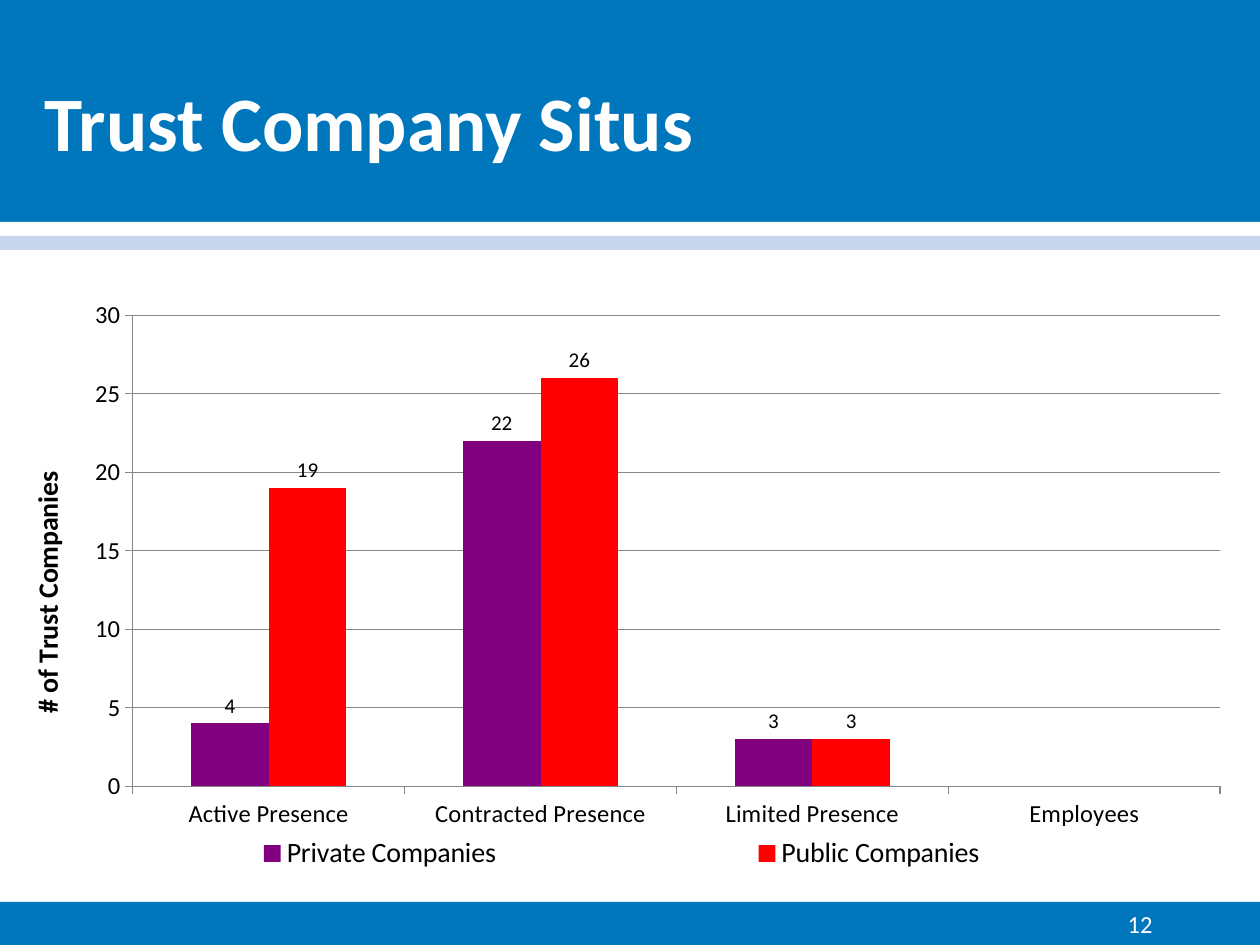
from dataclasses import dataclass

import pptx
import pptx.chart.data
import pptx.dml.color
import pptx.enum.chart
import pptx.enum.shapes
import pptx.enum.text
import pptx.oxml
import pptx.oxml.ns
import pptx.util

EMU_PER_PX = 914400 / 126
ALIGN = pptx.enum.text.PP_ALIGN
ANCHOR = pptx.enum.text.MSO_ANCHOR


@dataclass(frozen=True)
class Theme:
    font: str = "Calibri"
    backdrop: str = "969696"
    blue: str = "0076BC"
    pale_blue: str = "C8D7EE"
    white: str = "FFFFFF"
    black: str = "000000"
    rule: str = "868686"
    title_size: int = 44
    legend_size: int = 16
    axis_size: int = 14
    label_size: int = 12


@dataclass(frozen=True)
class Box:
    left: int
    top: int
    width: int
    height: int

    def emu(self) -> list[pptx.util.Emu]:
        return [px(n) for n in (self.left, self.top, self.width, self.height)]


@dataclass(frozen=True)
class Band:
    top: int
    height: int
    color: str


@dataclass(frozen=True)
class CompanySeries:
    name: str
    counts: tuple[int | None, ...]
    color: str


THEME = Theme()
SLIDE = Box(0, 0, 1260, 945)
BANDS = (
    Band(189, 756, THEME.white),
    Band(902, 43, THEME.blue),
    Band(0, 222, THEME.blue),
    Band(222, 14, THEME.white),
    Band(236, 14, THEME.pale_blue),
)
PRESENCE = ("Active Presence", "Contracted Presence", "Limited Presence", "Employees")
COMPANIES = (
    CompanySeries("Private Companies", (4, 22, 3, None), "800080"),
    CompanySeries("Public Companies", (19, 26, 3, None), "FF0000"),
)


def px(length: int) -> pptx.util.Emu:
    return pptx.util.Emu(round(length * EMU_PER_PX))


def rgb(color: str) -> pptx.dml.color.RGBColor:
    return pptx.dml.color.RGBColor.from_string(color)


def style_font(font, size: int, color: str = THEME.black, bold: bool = False) -> None:
    font.name = THEME.font
    font.size = pptx.util.Pt(size)
    font.bold = bold
    font.color.rgb = rgb(color)


def write_text(frame, text: str, *, size: int, color: str = THEME.black,
               bold: bool = False, align=None, anchor=None) -> None:
    paragraph = frame.paragraphs[0]
    run = paragraph.add_run()
    run.text = text
    style_font(run.font, size, color, bold)
    if align is not None:
        paragraph.alignment = align
    if anchor is not None:
        frame.vertical_anchor = anchor
        frame.word_wrap = True
        frame.auto_size = pptx.enum.text.MSO_AUTO_SIZE.NONE


def draw_band(slide, band: Band) -> None:
    area = Box(0, band.top, SLIDE.width, band.height)
    shape = slide.shapes.add_shape(pptx.enum.shapes.MSO_SHAPE.RECTANGLE, *area.emu())
    shape.shadow.inherit = False
    shape.fill.solid()
    shape.fill.fore_color.rgb = rgb(band.color)
    shape.line.fill.background()


def place_part(part, inner: bool = False, **fractions: float) -> None:
    """Give a chart part a manual layout in fractions of the chart area."""
    target = '<c:layoutTarget val="inner"/>' if inner else ""
    modes = "".join(f'<c:{k}Mode val="edge"/>' for k in "xy")
    sizes = "".join(f'<c:{k} val="{v}"/>' for k, v in fractions.items())
    layout = pptx.oxml.parse_xml(
        f"<c:layout {pptx.oxml.ns.nsdecls('c')}><c:manualLayout>"
        f"{target}{modes}{sizes}</c:manualLayout></c:layout>")
    for old in part.findall(pptx.oxml.ns.qn("c:layout")):
        part.remove(old)
    leading = [n for n in part if n.tag in map(pptx.oxml.ns.qn, ("c:legendPos", "c:tx"))]
    part.insert(len(leading), layout)


def style_axis(axis) -> None:
    style_font(axis.tick_labels.font, THEME.axis_size)
    axis.major_tick_mark = pptx.enum.chart.XL_TICK_MARK.OUTSIDE
    axis.minor_tick_mark = pptx.enum.chart.XL_TICK_MARK.NONE
    axis.format.line.color.rgb = rgb(THEME.rule)
    axis.format.line.width = pptx.util.Pt(0.75)


def style_series(series, color: str) -> None:
    series.invert_if_negative = False
    series.format.fill.solid()
    series.format.fill.fore_color.rgb = rgb(color)
    labels = series.data_labels
    labels.show_value = True
    labels.position = pptx.enum.chart.XL_LABEL_POSITION.OUTSIDE_END
    style_font(labels.font, THEME.label_size)


def draw_presence_chart(slide, area: Box) -> None:
    data = pptx.chart.data.CategoryChartData()
    data.categories = PRESENCE
    for company in COMPANIES:
        data.add_series(company.name, company.counts)
    chart = slide.shapes.add_chart(
        pptx.enum.chart.XL_CHART_TYPE.COLUMN_CLUSTERED, *area.emu(), data).chart
    chart.has_title = False
    style_font(chart.font, 10)

    columns = chart.plots[0]
    columns.gap_width = 150
    columns.overlap = 0
    columns.vary_by_categories = False
    for series, company in zip(columns.series, COMPANIES):
        style_series(series, company.color)
    plot_area = chart._chartSpace.chart.plotArea
    place_part(plot_area, inner=True, x=0.107, y=0.143, w=0.863, h=0.706)

    style_axis(chart.category_axis)
    counts = chart.value_axis
    style_axis(counts)
    counts.minimum_scale, counts.maximum_scale, counts.major_unit = 0, 30, 5
    counts.has_major_gridlines = True
    counts.major_gridlines.format.line.color.rgb = rgb(THEME.rule)
    counts.major_gridlines.format.line.width = pptx.util.Pt(0.75)
    heading = counts.axis_title
    write_text(heading.text_frame, "# of Trust Companies", size=THEME.legend_size, bold=True)
    heading.text_frame._txBody.bodyPr.set("rot", "-5400000")
    heading.text_frame._txBody.bodyPr.set("vert", "horz")
    place_part(heading._element, x=0.02, y=0.37)

    chart.has_legend = True
    chart.legend.position = pptx.enum.chart.XL_LEGEND_POSITION.RIGHT
    chart.legend.include_in_layout = False
    style_font(chart.legend.font, THEME.legend_size)
    place_part(chart.legend._element, x=0.01, y=0.92, w=0.97, h=0.06)


def main() -> None:
    deck = pptx.Presentation()
    deck.slide_width, deck.slide_height = px(SLIDE.width), px(SLIDE.height)
    slide = deck.slides.add_slide(deck.slide_layouts[5])
    slide.background.fill.solid()
    slide.background.fill.fore_color.rgb = rgb(THEME.backdrop)
    for band in BANDS:
        draw_band(slide, band)

    title = slide.shapes.title
    title.left, title.top, title.width, title.height = Box(32, 42, 1187, 158).emu()
    write_text(title.text_frame, "Trust Company Situs", size=THEME.title_size,
               color=THEME.white, bold=True, align=ALIGN.LEFT, anchor=ANCHOR.MIDDLE)
    # The title placeholder starts at the back; bring it in front of the bands.
    slide.shapes._spTree.append(title._element)

    page_number = slide.shapes.add_textbox(*Box(903, 882, 262, 63).emu())
    write_text(page_number.text_frame, "12", size=THEME.axis_size,
               color=THEME.white, align=ALIGN.RIGHT, anchor=ANCHOR.BOTTOM)
    draw_presence_chart(slide, Box(-2, 220, 1260, 667))
    deck.save("out.pptx")


if __name__ == "__main__":
    main()
